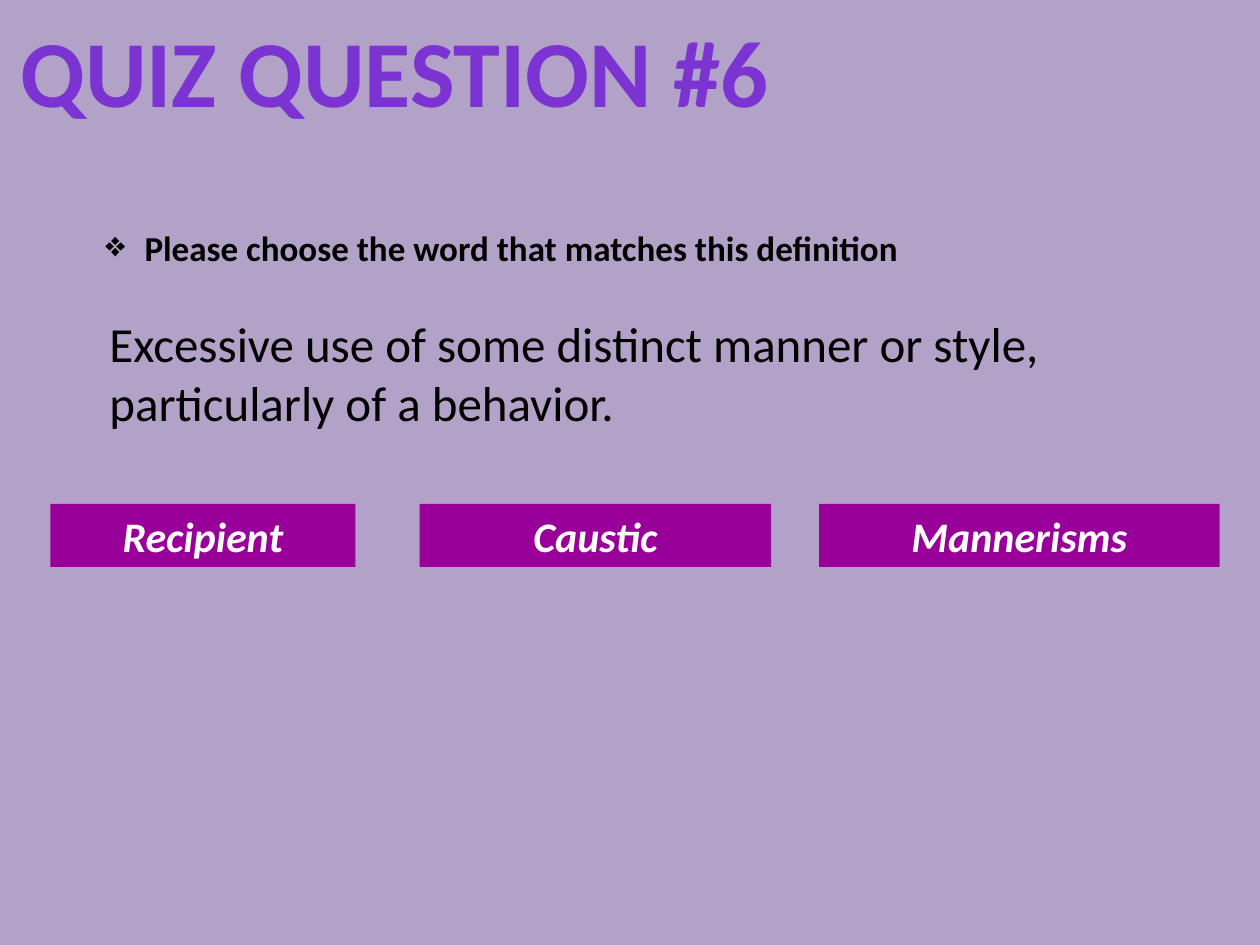
import pptx
import pptx.util
import pptx.dml.color
import pptx.enum.shapes
import pptx.enum.text
import pptx.oxml
from dataclasses import dataclass
from pptx.util import Inches

ALIGN = pptx.enum.text.PP_ALIGN
ANCHOR = pptx.enum.text.MSO_ANCHOR


@dataclass(frozen=True)
class Theme:
    font: str = "Calibri"
    background: str = "B3A2C7"
    title: str = "7B34D2"
    text: str = "000000"
    answer: str = "990099"
    answer_text: str = "FFFFFF"
    title_size: int = 54
    definition_size: int = 28
    answer_size: int = 24
    instruction_size: int = 20


THEME = Theme()


def rgb(value):
    return pptx.dml.color.RGBColor.from_string(value)


def place(shape, left, top, width, height):
    bounds = {"left": left, "top": top, "width": width, "height": height}
    for name, value in bounds.items():
        setattr(shape, name, Inches(value))


def write(shape, text, size, color, align=ALIGN.LEFT, anchor=ANCHOR.TOP,
          wrap=True, **styles):
    """Put one formatted paragraph in a shape and return the paragraph."""
    frame = shape.text_frame
    frame_format = {
        "word_wrap": wrap,
        "auto_size": pptx.enum.text.MSO_AUTO_SIZE.SHAPE_TO_FIT_TEXT,
        "vertical_anchor": anchor,
    }
    for name, value in frame_format.items():
        setattr(frame, name, value)
    para = frame.paragraphs[0]
    para.alignment = align
    span = para.add_run()
    span.text = text
    font_format = {"name": THEME.font, "size": pptx.util.Pt(size), **styles}
    for name, value in font_format.items():
        setattr(span.font, name, value)
    span.font.color.rgb = rgb(color)
    return para


def add_text(page, bounds, text, size, **styles):
    box = page.shapes.add_textbox(*map(Inches, bounds))
    return write(box, text, size, THEME.text, **styles)


def add_bullet(para, symbol, indent):
    properties = para._p.get_or_add_pPr()
    properties.set("marL", str(Inches(indent)))
    properties.set("indent", str(-Inches(indent)))
    bullet = pptx.oxml.parse_xml(
        '<a:buChar xmlns:a="http://schemas.openxmlformats.org/drawingml/2006/main"'
        f' char="{symbol}"/>')
    properties.append(bullet)


def add_answer(page, word, left, width):
    box = page.shapes.add_shape(
        pptx.enum.shapes.MSO_SHAPE.RECTANGLE,
        Inches(left), Inches(4), Inches(width), Inches(0.5))
    box.shadow.inherit = False
    box.fill.solid()
    box.fill.fore_color.rgb = rgb(THEME.answer)
    box.line.fill.background()
    write(box, word, THEME.answer_size, THEME.answer_text, align=ALIGN.CENTER,
          anchor=ANCHOR.MIDDLE, bold=True, italic=True)


def main():
    deck = pptx.Presentation()
    deck.slide_width, deck.slide_height = Inches(10), Inches(7.5)
    page = deck.slides.add_slide(deck.slide_layouts.get_by_name("Title Only"))
    page.background.fill.solid()
    page.background.fill.fore_color.rgb = rgb(THEME.background)

    # Title
    place(page.shapes.title, 0.03, 0.05, 6.2, 1.01)
    write(page.shapes.title, "QUIZ QUESTION #6", THEME.title_size, THEME.title,
          align=ALIGN.CENTER, wrap=False, bold=True)

    # Question
    add_text(page, (0.77, 2.44, 7.92, 1.04),
             "Excessive use of some distinct manner or style, "
             "particularly of a behavior.", THEME.definition_size)
    instruction = add_text(
        page, (0.43, 1.75, 7.17, 0.44),
        "Please choose the word that matches this definition ",
        THEME.instruction_size, align=ALIGN.CENTER, bold=True)
    add_bullet(instruction, "❖", 0.31)

    # Answers
    answers = (("Mannerisms", 6.5, 3.18), ("Caustic", 3.33, 2.79),
               ("Recipient", 0.4, 2.42))
    for word, left, width in answers:
        add_answer(page, word, left, width)

    deck.save("out.pptx")


if __name__ == "__main__":
    main()
